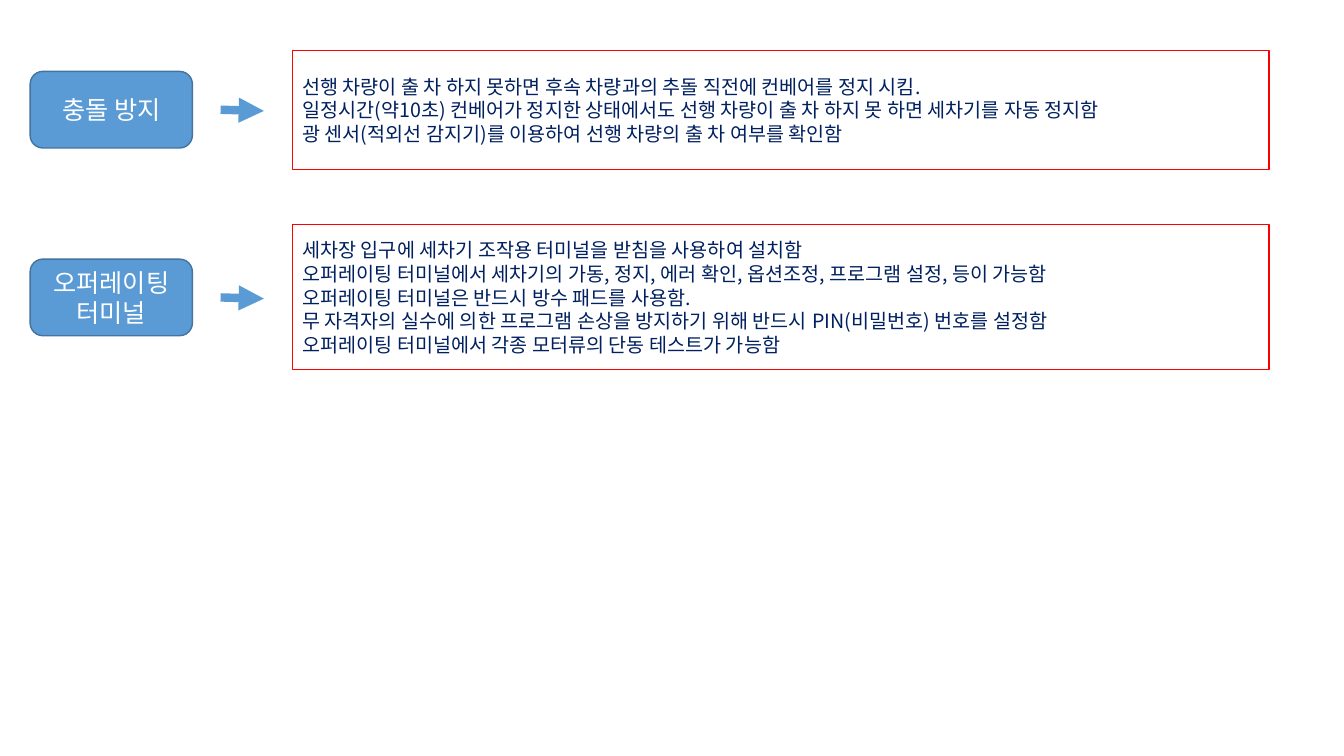
import pptx
import pptx.util
import pptx.dml.color
import pptx.enum.shapes
import pptx.enum.text
import pptx.oxml
import pptx.oxml.ns
import lxml.etree

Cm = pptx.util.Cm
Pt = pptx.util.Pt
qn = pptx.oxml.ns.qn
SHAPES = pptx.enum.shapes.MSO_SHAPE
ALIGN = pptx.enum.text.PP_ALIGN
FONT = "Noto Sans CJK KR"
COLORS = {
    "blue": "5B9BD5",
    "edge": "43739E",
    "red": "FF0000",
    "navy": "002060",
    "white": "FFFFFF",
}
LABEL_HEIGHT = 1.93


def color(name):
    return pptx.dml.color.RGBColor.from_string(COLORS[name])


def add_box(kind, left, top, width, height, fill, edge, lines, size, ink, align):
    box = page.shapes.add_shape(kind, Cm(left), Cm(top), Cm(width), Cm(height))
    box.shadow.inherit = False
    if fill:
        box.fill.solid()
        box.fill.fore_color.rgb = color(fill)
    else:
        box.fill.background()
    box.line.color.rgb = color(edge)
    box.line.width = Pt(1)
    frame = box.text_frame
    frame.word_wrap = True
    frame.vertical_anchor = pptx.enum.text.MSO_ANCHOR.MIDDLE
    frame.text = "\n".join(lines)
    for para in frame.paragraphs:
        para.alignment = align
        para.font.size = Pt(size)
        para.font.name = FONT
        para.font.color.rgb = color(ink)
        properties = para._p.pPr.find(qn("a:defRPr"))
        lxml.etree.SubElement(properties, qn("a:ea"), typeface=FONT)


deck = pptx.Presentation()
deck.slide_width = Cm(33.87)
deck.slide_height = Cm(19.05)
page = deck.slides.add_slide(deck.slide_layouts[6])

sections = [
    (1.8, 1.27, 3.0, ["충돌 방지"], [
        "선행 차량이 출 차 하지 못하면 후속 차량과의 추돌 직전에 컨베어를 정지 시킴.",
        "일정시간(약10초) 컨베어가 정지한 상태에서도 선행 차량이 출 차 하지 못 하면 세차기를 자동 정지함",
        "광 센서(적외선 감지기)를 이용하여 선행 차량의 출 차 여부를 확인함",
    ]),
    (6.53, 5.66, 3.66, ["오퍼레이팅", "터미널"], [
        "세차장 입구에 세차기 조작용 터미널을 받침을 사용하여 설치함",
        "오퍼레이팅 터미널에서 세차기의 가동, 정지, 에러 확인, 옵션조정, 프로그램 설정, 등이 가능함",
        "오퍼레이팅 터미널은 반드시 방수 패드를 사용함.",
        "무 자격자의 실수에 의한 프로그램 손상을 방지하기 위해 반드시 PIN(비밀번호) 번호를 설정함",
        "오퍼레이팅 터미널에서 각종 모터류의 단동 테스트가 가능함",
    ]),
]

for label_top, detail_top, detail_height, label, details in sections:
    middle = label_top + LABEL_HEIGHT / 2
    arrow = page.shapes.add_connector(
        pptx.enum.shapes.MSO_CONNECTOR.STRAIGHT,
        Cm(5.56), Cm(middle), Cm(6.65), Cm(middle + 0.03))
    arrow.line.color.rgb = color("blue")
    arrow.line.width = Pt(6)
    lxml.etree.SubElement(arrow.line._get_or_add_ln(), qn("a:tailEnd"), type="triangle")
    lxml.etree.SubElement(arrow._element.spPr, qn("a:effectLst"))

    add_box(SHAPES.ROUNDED_RECTANGLE, 0.76, label_top, 4.09, LABEL_HEIGHT,
            "blue", "edge", label, 18, "white", ALIGN.CENTER)
    add_box(SHAPES.RECTANGLE, 7.37, detail_top, 24.61, detail_height,
            None, "red", details, 14, "navy", ALIGN.LEFT)

deck.save("out.pptx")
